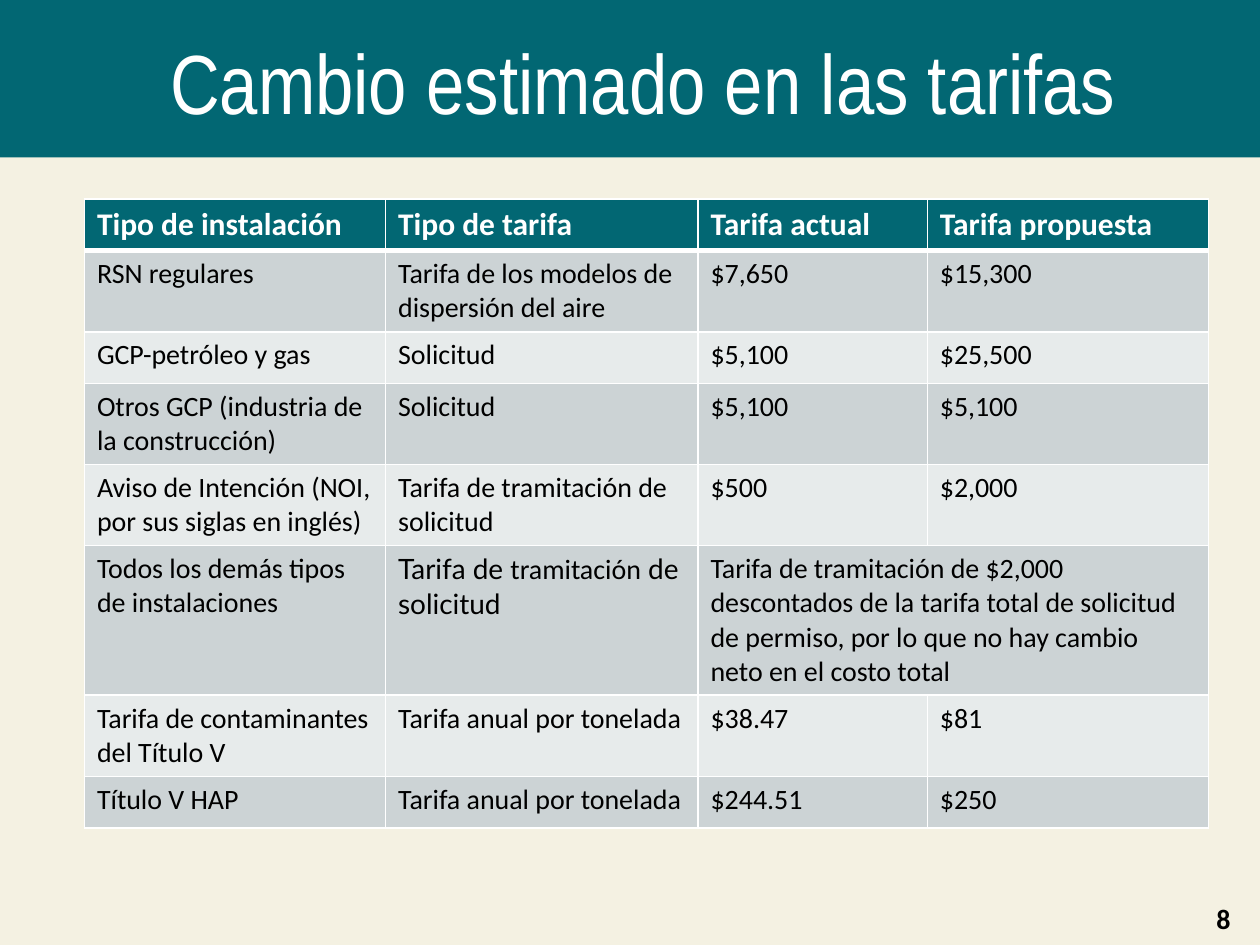
from lxml import etree
from pptx import Presentation
from pptx.dml.color import RGBColor
from pptx.enum.shapes import MSO_SHAPE
from pptx.enum.text import MSO_ANCHOR, MSO_AUTO_SIZE, PP_ALIGN
from pptx.oxml.ns import qn
from pptx.util import Inches, Pt

RECTANGLE = MSO_SHAPE.RECTANGLE
MIDDLE = MSO_ANCHOR.MIDDLE
NO_FIT = MSO_AUTO_SIZE.NONE
LEFT, CENTER = PP_ALIGN.LEFT, PP_ALIGN.CENTER

TEAL, CREAM, WHITE, BLACK = "026773", "F4F1E2", "FFFFFF", "000000"
ROW_FILLS = ("E7EBEB", "CCD3D5")
COLUMN_WIDTHS = (2.39, 2.48, 1.82, 2.23)
ROW_HEIGHT = 0.41
WIDE_FEE_ROW = 5
FEES = (
    ("Tipo de instalación", "Tipo de tarifa", "Tarifa actual", "Tarifa propuesta"),
    ("RSN regulares", "Tarifa de los modelos de dispersión del aire", "$7,650", "$15,300"),
    ("GCP-petróleo y gas", "Solicitud", "$5,100", "$25,500"),
    ("Otros GCP (industria de la construcción)", "Solicitud", "$5,100", "$5,100"),
    ("Aviso de Intención (NOI, por sus siglas en inglés)",
     "Tarifa de tramitación de solicitud", "$500", "$2,000"),
    ("Todos los demás tipos de instalaciones",
     (("Tarifa de ", "Lato"), ("tramitación", "Calibri"), (" de solicitud", "Lato")),
     "Tarifa de tramitación de $2,000 descontados de la tarifa total de solicitud "
     "de permiso, por lo que no hay cambio neto en el costo total", ""),
    ("Tarifa de contaminantes del Título V", "Tarifa anual por tonelada", "$38.47", "$81"),
    ("Título V HAP", "Tarifa anual por tonelada", "$244.51", "$250"),
)


def color(hex_code):
    """Turn a hex string into a colour."""
    return RGBColor.from_string(hex_code)


def style_font(font, name, size, hex_code, bold=False):
    """Set the face, size, colour and weight of a font."""
    font.name, font.size, font.bold = name, Pt(size), bold
    font.color.rgb = color(hex_code)


def add_heading(slide, left, top, width, height):
    """Draw the band in its box and set the title over it."""
    band = slide.shapes.add_shape(
        RECTANGLE, Inches(left), Inches(top), Inches(width), Inches(height))
    band.shadow.inherit = False
    band.fill.solid()
    band.fill.fore_color.rgb = color(TEAL)
    band.line.fill.background()
    title = slide.shapes.title
    title._element.addprevious(band._element)
    title.left, title.top = Inches(left + 1.25), Inches(top + 0.17)
    title.width, title.height = Inches(width - 1.42), Inches(height - 0.3)
    frame = title.text_frame
    frame.text = "Cambio estimado en las tarifas"
    frame.auto_size = NO_FIT
    frame.vertical_anchor = MIDDLE
    heading = frame.paragraphs[0]
    heading.alignment = LEFT
    style_font(heading.runs[0].font, "Arial Narrow", 48, WHITE)


def set_borders(cell, top, bottom):
    """Give a cell white borders, with top and bottom widths in points."""
    properties = cell._tc.get_or_add_tcPr()
    for side, points in (("L", 1), ("R", 1), ("T", top), ("B", bottom)):
        border = etree.SubElement(properties, qn(f"a:ln{side}"), w=str(Pt(points)))
        fill = etree.SubElement(border, qn("a:solidFill"))
        etree.SubElement(fill, qn("a:srgbClr"), val=WHITE)


def fill_cell(cell, content, row):
    """Write one fee cell and style it for its row."""
    is_header = row == 0
    set_borders(cell, 3 if row == 1 else 1, 3 if is_header else 1)
    cell.fill.solid()
    cell.fill.fore_color.rgb = color(TEAL if is_header else ROW_FILLS[row % 2])
    parts = ((content, "Calibri"),) if isinstance(content, str) else content
    paragraph = cell.text_frame.paragraphs[0]
    for text, face in parts:
        if text:
            run = paragraph.add_run()
            run.text = text
            style_font(run.font, face, 18 if is_header else 16,
                       WHITE if is_header else BLACK, is_header)


def add_fee_table(slide, left, top, width, height):
    """Place the table of current and proposed fees."""
    frame = slide.shapes.add_table(
        len(FEES), len(COLUMN_WIDTHS),
        Inches(left), Inches(top), Inches(width), Inches(height))
    table = frame.table
    for column, column_width in zip(table.columns, COLUMN_WIDTHS):
        column.width = Inches(column_width)
    for row, contents in enumerate(FEES):
        table.rows[row].height = Inches(ROW_HEIGHT)
        for column, content in enumerate(contents):
            fill_cell(table.cell(row, column), content, row)
    table.cell(WIDE_FEE_ROW, 2).merge(table.cell(WIDE_FEE_ROW, 3))
    frame.height = Inches(height)


def add_page_number(slide, left, top, width, height):
    """Place the page number."""
    frame = slide.shapes.add_textbox(
        Inches(left), Inches(top), Inches(width), Inches(height)).text_frame
    frame.word_wrap = True
    frame.vertical_anchor = MIDDLE
    frame.text = "8"
    number = frame.paragraphs[0]
    number.alignment = CENTER
    style_font(number.runs[0].font, "Calibri", 16, BLACK, True)


def main():
    """Build and save the slide."""
    deck = Presentation()
    deck.slide_width, deck.slide_height = Inches(10), Inches(7.5)
    slide = deck.slides.add_slide(deck.slide_layouts[5])
    slide.background.fill.solid()
    slide.background.fill.fore_color.rgb = color(CREAM)
    add_heading(slide, 0, 0, 10, 1.25)
    add_fee_table(slide, 0.67, 1.58, 8.92, 5.68)
    add_page_number(slide, 9.42, 7.15, 0.58, 0.27)
    deck.save("out.pptx")


if __name__ == "__main__":
    main()
